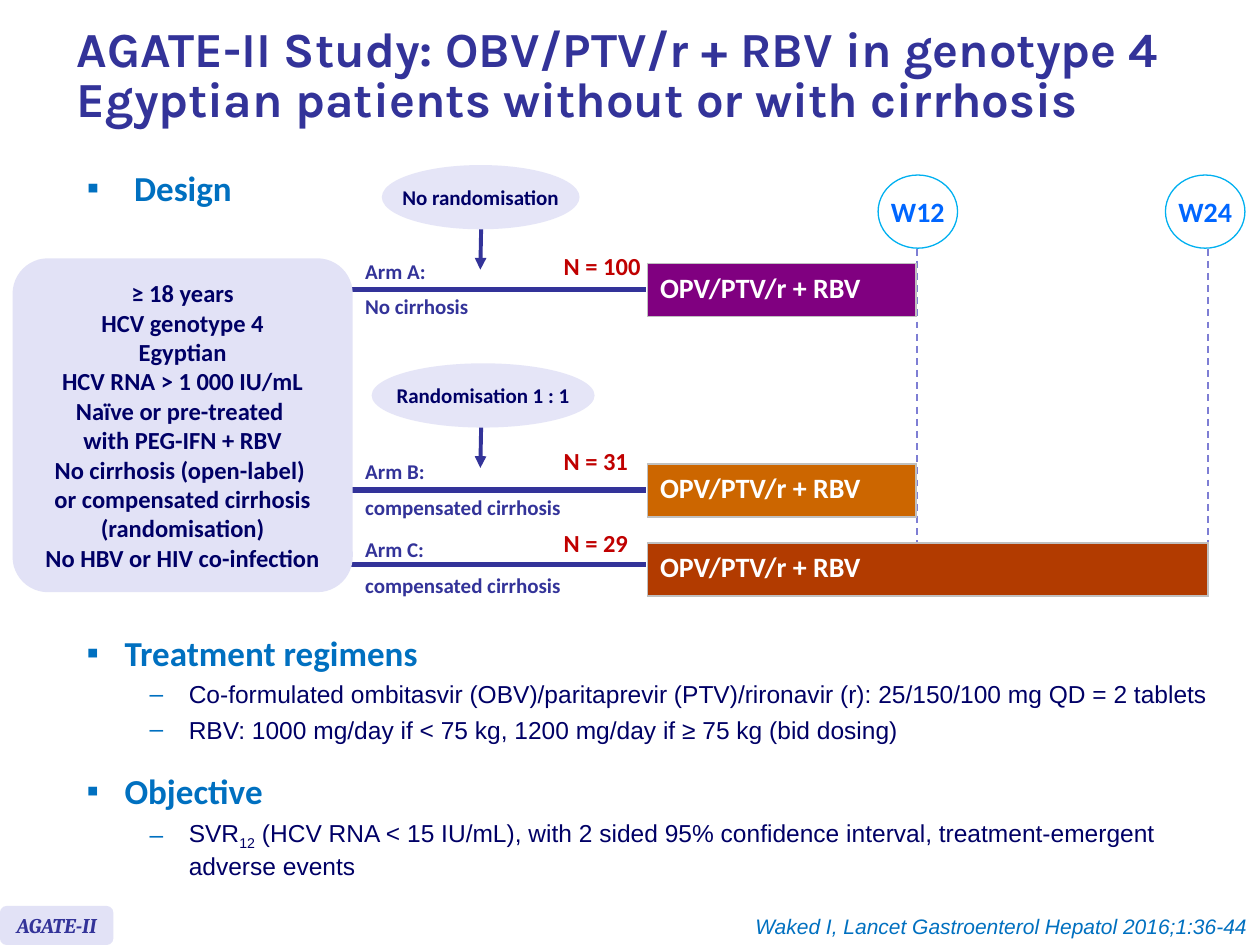
"""Build the AGATE-II study design slide."""
from dataclasses import dataclass

import pptx
import pptx.dml.color
import pptx.enum.dml
import pptx.enum.shapes
import pptx.enum.text
import pptx.oxml.ns
import pptx.util
from lxml import etree

Pt = pptx.util.Pt
ALIGN = pptx.enum.text.PP_ALIGN
ANCHOR = pptx.enum.text.MSO_ANCHOR
SHAPE = pptx.enum.shapes.MSO_SHAPE


@dataclass(frozen=True)
class Theme:
    indigo: str = "333399"
    navy: str = "000066"
    blue: str = "0070C0"
    week: str = "0066FF"
    week_ring: str = "00B0F0"
    guide: str = "7E7ED4"
    red: str = "C00000"
    oval: str = "E5E5F7"
    panel: str = "E2E2F6"
    border: str = "C0C0C0"
    white: str = "FFFFFF"
    arm_a: str = "800080"
    arm_b: str = "CC6600"
    arm_c: str = "B23B00"
    title: int = 28
    heading: int = 20
    bar: int = 16
    body: int = 14
    small: int = 12
    sans: str = "Calibri"
    detail: str = "Arial"
    display: str = "Karla"
    serif: str = "Cambria"


THEME = Theme()


def rgb(value):
    return pptx.dml.color.RGBColor.from_string(value)


def add_xml(parent, tag, **attributes):
    return etree.SubElement(parent, pptx.oxml.ns.qn(tag), attributes)


def style(paragraph, size, color, face=THEME.sans, bold=True, italic=False):
    font = paragraph.font
    font.size, font.name, font.bold, font.italic = Pt(size), face, bold, italic
    font.color.rgb = rgb(color)


def write(frame, lines, size, color, align=ALIGN.LEFT, gap=0, wrap=False, **font):
    frame.word_wrap = wrap
    for index, line in enumerate(lines):
        paragraph = frame.add_paragraph() if index else frame.paragraphs[0]
        paragraph.text = line
        paragraph.alignment = align
        if index and gap:
            paragraph.space_before = Pt(gap)
        style(paragraph, size, color, **font)


def add_label(slide, box, lines, size, color, **options):
    label = slide.shapes.add_textbox(*map(Pt, box))
    write(label.text_frame, lines, size, color, **options)
    return label.text_frame


def add_panel(slide, kind, box, fill, lines, size, color, ring=None, corner=None, **options):
    panel = slide.shapes.add_shape(kind, *map(Pt, box))
    panel.shadow.inherit = False
    panel.fill.solid()
    panel.fill.fore_color.rgb = rgb(fill)
    if ring:
        panel.line.color.rgb = rgb(ring)
        panel.line.width = Pt(0.75)
    else:
        panel.line.fill.background()
    if corner:
        panel.adjustments[0] = corner
    panel.text_frame.vertical_anchor = ANCHOR.MIDDLE
    write(panel.text_frame, lines, size, color, align=ALIGN.CENTER, **options)


def add_line(slide, start, end, color, width, dashed=False, arrow=False):
    line = slide.shapes.add_connector(
        pptx.enum.shapes.MSO_CONNECTOR.STRAIGHT, *map(Pt, start + end))
    line.line.color.rgb = rgb(color)
    line.line.width = Pt(width)
    if dashed:
        line.line.dash_style = pptx.enum.dml.MSO_LINE.DASH
    properties = line._element.spPr
    if arrow:
        add_xml(properties.find(pptx.oxml.ns.qn("a:ln")), "a:tailEnd", type="triangle")
    add_xml(properties, "a:effectLst")


def add_bar(slide, left, top, width, regimen, color):
    bar = slide.shapes.add_table(1, 1, Pt(left), Pt(top), Pt(width), Pt(30.4))
    cell = bar.table.cell(0, 0)
    cell.vertical_anchor = ANCHOR.MIDDLE
    write(cell.text_frame, [regimen], THEME.bar, THEME.white, wrap=True)
    cell.text_frame.paragraphs[0].line_spacing = 0.8
    properties = cell._tc.get_or_add_tcPr()
    for side in ("a:lnL", "a:lnR", "a:lnT", "a:lnB"):
        edge = add_xml(properties, side, w=str(Pt(1)))
        add_xml(add_xml(edge, "a:solidFill"), "a:srgbClr", val=THEME.border)
    cell.fill.solid()
    cell.fill.fore_color.rgb = rgb(color)


def add_bullet(paragraph, mark, margin, hanging):
    properties = paragraph._p.get_or_add_pPr()
    properties.set("marL", str(Pt(margin)))
    properties.set("indent", str(-Pt(hanging)))
    add_xml(add_xml(properties, "a:buClr"), "a:srgbClr", val=THEME.blue)
    add_xml(properties, "a:buFont", typeface=THEME.detail)
    add_xml(properties, "a:buChar", char=mark)


def add_section(slide, box, heading, details=(), margin=21.6):
    frame = slide.shapes.add_textbox(*map(Pt, box)).text_frame
    frame.word_wrap = True
    title = frame.paragraphs[0]
    title.text = heading
    add_bullet(title, "▪", margin, margin)
    style(title, THEME.heading, THEME.blue)
    for parts in details:
        detail = frame.add_paragraph()
        detail.level = 1
        for text, baseline in parts:
            run = detail.add_run()
            run.text = text
            if baseline:
                run._r.get_or_add_rPr().set("baseline", str(baseline))
        add_bullet(detail, "–", 58.3, 22.3)
        detail.space_before = Pt(3.5)
        style(detail, THEME.body, THEME.navy, THEME.detail, bold=False)


def add_allocation(slide, left, top, width, text):
    add_line(slide, (275, top + 34), (274.5, top + 59.8), THEME.indigo, 2.25, arrow=True)
    add_panel(slide, SHAPE.OVAL, (left, top, width, 36.7), THEME.oval, [text],
              THEME.small, THEME.navy)


def add_week(slide, left, guide, text):
    add_line(slide, (guide, 128.2), (guide, 335.5), THEME.guide, 1, dashed=True)
    add_panel(slide, SHAPE.OVAL, (left, 100, 45.4, 41.8), THEME.white, [text],
              THEME.bar, THEME.week, ring=THEME.week_ring)


def add_arm(slide, name, population, count, tops, bar_width, color):
    label_top, count_top, line_y, bar_top = tops
    add_line(slide, (199.6, line_y), (369, line_y), THEME.indigo, 3)
    add_label(slide, (201.6, label_top, 127.4, 42.5), [name, population],
              THEME.small, THEME.indigo, gap=6)
    count_width = 59 if len(count) > 6 else 51.8
    add_label(slide, (314.6, count_top, count_width, 24.5), [count],
              THEME.body, THEME.red, align=ALIGN.CENTER)
    add_bar(slide, 370, bar_top, bar_width, "OPV/PTV/r + RBV", color)


def main():
    deck = pptx.Presentation()
    deck.slide_width, deck.slide_height = Pt(720), Pt(540)
    slide = deck.slides.add_slide(deck.slide_layouts[6])

    title = add_label(
        slide, (36.7, 5.8, 657.4, 77),
        ["AGATE-II Study: OBV/PTV/r + RBV in genotype 4 Egyptian patients without or with cirrhosis"],
        THEME.title, THEME.indigo, face=THEME.display, wrap=True)
    title.vertical_anchor = ANCHOR.MIDDLE
    title.paragraphs[0].line_spacing = 0.85

    add_allocation(slide, 218.2, 94.3, 113, "No randomisation")
    add_allocation(slide, 212.4, 207.6, 127.4, "Randomisation 1 : 1")
    add_week(slide, 501.8, 524.2, "W12")
    add_week(slide, 666, 690.5, "W24")
    for arm in (
        ("Arm A:", "No cirrhosis", "N = 100", (144, 139.7, 165.6, 150.5), 153.4, THEME.arm_a),
        ("Arm B:", "compensated cirrhosis", "N = 31", (258.5, 251.3, 280, 265), 153.4, THEME.arm_b),
        ("Arm C:", "compensated cirrhosis", "N = 29", (303.1, 298, 322.6, 310.3), 320.4, THEME.arm_c),
    ):
        add_arm(slide, *arm)
    add_panel(
        slide, SHAPE.ROUNDED_RECTANGLE, (7.2, 147.6, 194.4, 190.8), THEME.panel,
        ["≥ 18 years", "HCV genotype 4", "Egyptian", "HCV RNA > 1 000 IU/mL",
         "Naïve or pre-treated \vwith PEG-IFN + RBV",
         "No cirrhosis (open-label) \vor compensated cirrhosis (randomisation)",
         "No HBV or HIV co-infection"],
        THEME.body, THEME.navy, corner=0.106, wrap=True)

    add_section(slide, (42.5, 91.4, 142.6, 45.4), "Design", margin=27)
    add_section(slide, (42.5, 357.1, 657.4, 77), "Treatment regimens", [
        [("Co-formulated ombitasvir (OBV)/paritaprevir (PTV)/rironavir (r): "
          "25/150/100 mg QD = 2 tablets", 0)],
        [("RBV: 1000 mg/day if < 75 kg, 1200 mg/day if ≥ 75 kg (bid dosing)", 0)]])
    add_section(slide, (42.5, 436.3, 657.4, 77), "Objective", [
        [("SVR", 0), ("12", -25000),
         (" (HCV RNA < 15 IU/mL), with 2 sided 95% confidence interval, "
          "treatment-emergent adverse events", 0)]])

    add_panel(slide, SHAPE.ROUNDED_RECTANGLE, (0, 517.7, 64.8, 22.3), THEME.panel,
              ["AGATE-II"], THEME.small, THEME.indigo, corner=0.167,
              face=THEME.serif, italic=True)
    add_label(slide, (414.7, 518.4, 305.3, 21.6),
              ["Waked I, Lancet Gastroenterol Hepatol 2016;1:36-44"], THEME.small, THEME.blue,
              align=ALIGN.RIGHT, face=THEME.detail, bold=False, italic=True)
    deck.save("out.pptx")


if __name__ == "__main__":
    main()
